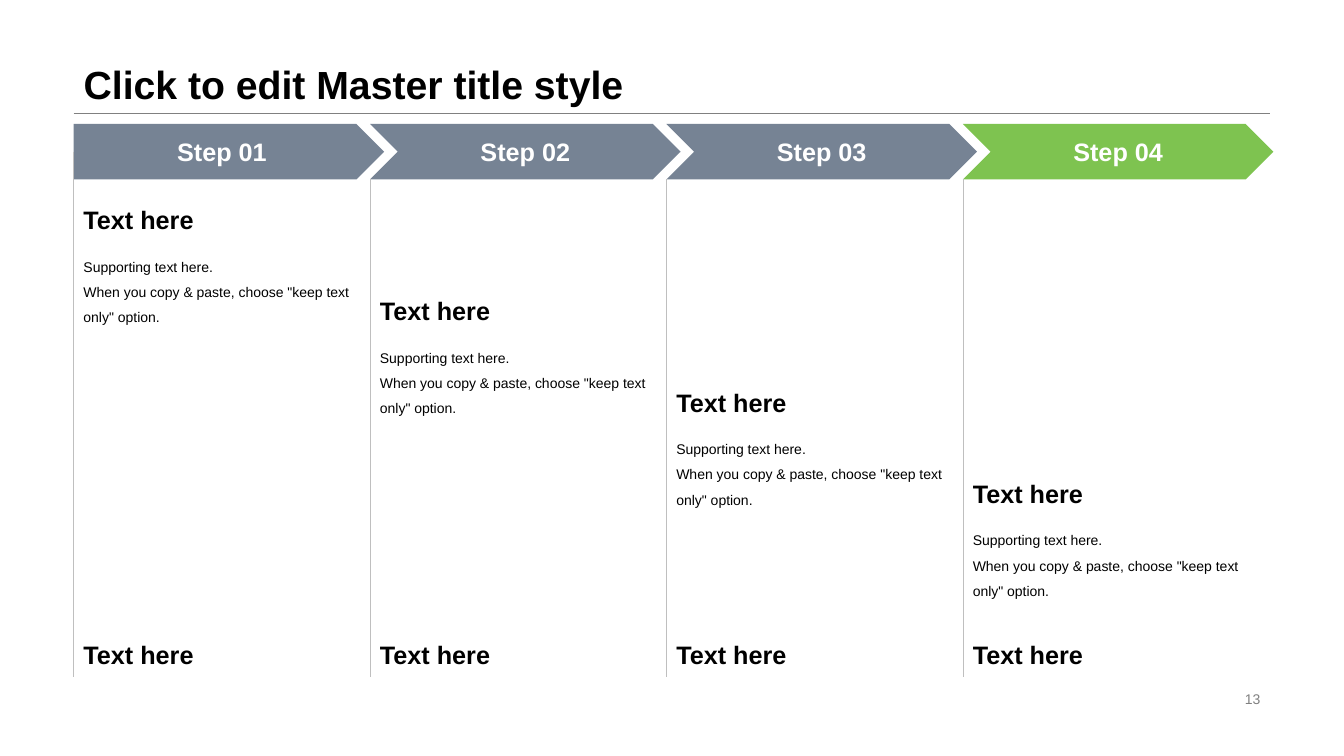
from collections import namedtuple
from dataclasses import dataclass

from lxml import etree
from pptx import Presentation
from pptx.dml.color import RGBColor as RGB
from pptx.enum.shapes import MSO_CONNECTOR as CONN, MSO_SHAPE as SHAPE
from pptx.enum.text import MSO_ANCHOR as ANCHOR, MSO_AUTO_SIZE as FIT, PP_ALIGN as ALIGN
from pptx.oxml.ns import qn
from pptx.util import Inches, Pt

Box = namedtuple("Box", "x y w h")


@dataclass(frozen=True)
class Theme:
    font: str = "Arial"
    ink: str = "000000"
    white: str = "FFFFFF"
    step: str = "768394"
    accent: str = "7EC350"
    muted: str = "808080"
    divider: str = "BFBFBF"
    title: int = 28
    heading: int = 18
    body: int = 10
    hairline: float = 0.25


T = Theme()
STEPS = ["Step 01", "Step 02", "Step 03", "Step 04"]
HEADING = "Text here"
SUPPORT = ["Supporting text here.",
           'When you copy & paste, choose "keep text only" option.']
COL, ARROW_W, ARROW_H = 2.94, 3.08, 0.55
HEADING_H, SUPPORT_H, DROP = 0.45, 1.06, 0.905


def emu(box):
    return [Inches(v) for v in box]


def write(sp, *lines, size=T.heading, color=T.ink, bold=False,
          align=ALIGN.LEFT, anchor=ANCHOR.TOP, spacing=1.0, wrap=True):
    tf = sp.text_frame
    tf.auto_size = FIT.NONE
    tf.word_wrap = wrap
    tf.vertical_anchor = anchor
    for i, line in enumerate(lines):
        p = tf.add_paragraph() if i else tf.paragraphs[0]
        p.alignment = align
        p.line_spacing = spacing
        r = p.add_run()
        r.text = line
        r.font.name = T.font
        r.font.size = Pt(size)
        r.font.bold = bold
        r.font.color.rgb = RGB.from_string(color)


def add_text(s, box, *lines, **fmt):
    write(s.shapes.add_textbox(*emu(box)), *lines, **fmt)


def add_line(s, x1, y1, x2, y2, color):
    line = s.shapes.add_connector(CONN.STRAIGHT, *emu((x1, y1, x2, y2)))
    line.line.color.rgb = RGB.from_string(color)
    line.line.width = Pt(T.hairline)
    etree.SubElement(line._element.spPr, qn("a:effectLst"))
    return line


def add_header(s, box, title):
    bottom = box.y + box.h
    add_line(s, box.x, bottom, box.x + box.w, bottom, T.muted)
    sp = s.shapes.title
    sp.left, sp.top, sp.width, sp.height = emu(box)
    write(sp, title, size=T.title, bold=True, anchor=ANCHOR.BOTTOM, spacing=0.9)


def add_arrow(s, box, label, first, last):
    sp = s.shapes.add_shape(SHAPE.PENTAGON if first else SHAPE.CHEVRON, *emu(box))
    sp.shadow.inherit = False
    sp.fill.solid()
    sp.fill.fore_color.rgb = RGB.from_string(T.accent if last else T.step)
    sp.line.fill.background()
    write(sp, label, color=T.white, bold=True, align=ALIGN.CENTER,
          anchor=ANCHOR.MIDDLE, wrap=False)
    return sp


def add_column(s, box, label, i):
    first, last = i == 0, i == len(STEPS) - 1
    arrow = add_arrow(s, Box(box.x, box.y, ARROW_W, ARROW_H), label, first, last)
    bottom = box.y + box.h
    line = add_line(s, box.x, box.y + ARROW_H, box.x, bottom, T.divider)
    if first:
        line.begin_connect(arrow, 1)

    top = box.y + 0.75 + i * DROP
    add_text(s, Box(box.x, top, box.w, HEADING_H), HEADING, bold=True)
    add_text(s, Box(box.x, top + HEADING_H, box.w, SUPPORT_H), *SUPPORT,
             size=T.body, spacing=1.5)
    add_text(s, Box(box.x, bottom - HEADING_H, box.w, HEADING_H), HEADING,
             bold=True, anchor=ANCHOR.MIDDLE)


def add_steps(s, box):
    for i, label in enumerate(STEPS):
        add_column(s, Box(box.x + i * COL, box.y, COL, box.h), label, i)


def add_page_number(s, box, number):
    add_text(s, box, number, size=T.body, color=T.muted,
             align=ALIGN.RIGHT, anchor=ANCHOR.MIDDLE)


def main():
    prs = Presentation()
    prs.slide_width, prs.slide_height = Inches(13.33), Inches(7.5)
    s = prs.slides.add_slide(prs.slide_layouts[5])
    add_header(s, Box(0.73, 0, 11.87, 1.12), "Click to edit Master title style")
    add_steps(s, Box(0.73, 1.23, 11.87, 5.49))
    add_page_number(s, Box(9.42, 6.82, 3.18, 0.23), "13")
    prs.save("out.pptx")


if __name__ == "__main__":
    main()
